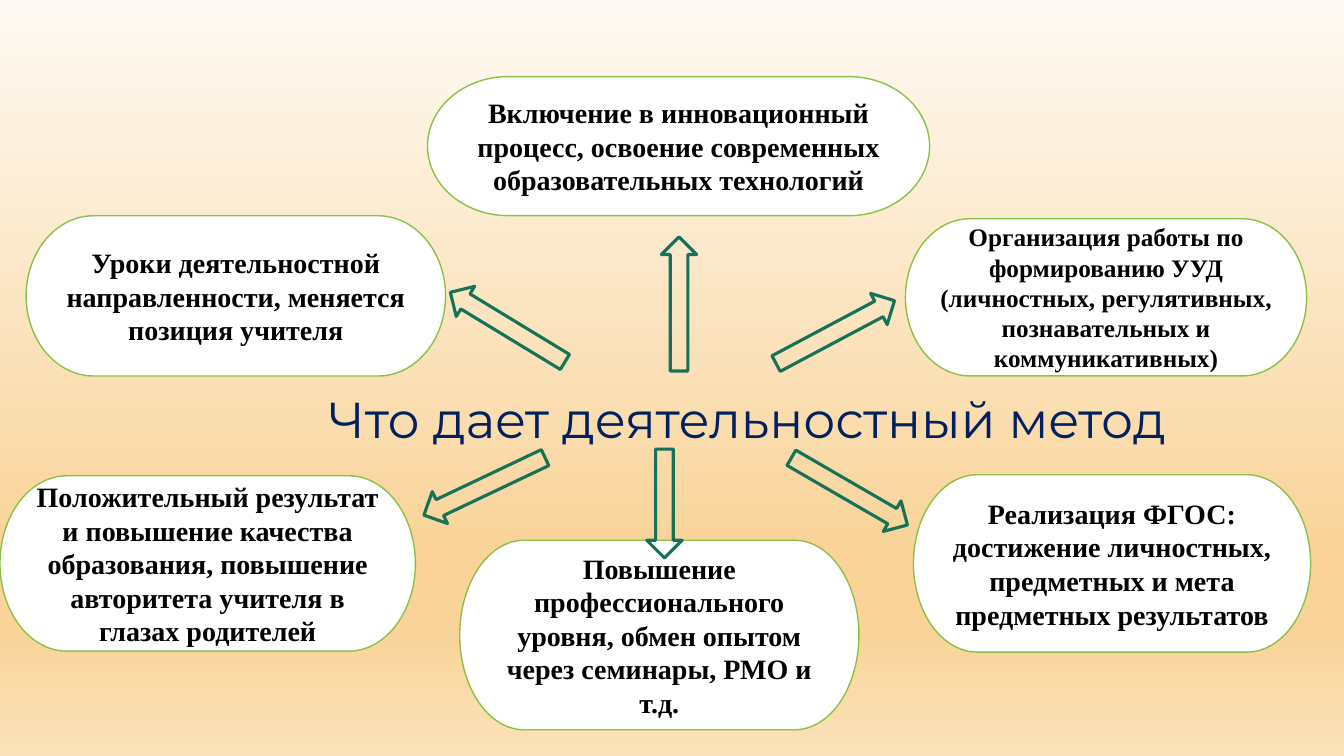
from lxml import etree
from pptx import Presentation
from pptx.dml.color import RGBColor
from pptx.enum.shapes import MSO_SHAPE
from pptx.enum.text import MSO_ANCHOR, MSO_AUTO_SIZE, PP_ALIGN
from pptx.oxml.ns import qn
from pptx.util import Inches, Pt

TERMINATOR, ARROW = MSO_SHAPE.FLOWCHART_TERMINATOR, MSO_SHAPE.RIGHT_ARROW
TOP, MIDDLE = MSO_ANCHOR.TOP, MSO_ANCHOR.MIDDLE
CENTER = PP_ALIGN.CENTER

NAVY = RGBColor(0x00, 0x20, 0x60)
BLACK = RGBColor(0x00, 0x00, 0x00)
WHITE = RGBColor(0xFF, 0xFF, 0xFF)
LIME = RGBColor(0x8B, 0xC1, 0x45)
GREEN = RGBColor(0x15, 0x72, 0x59)
BACKGROUND = [  # percent, colour
    (0, RGBColor(0xFE, 0xFA, 0xF3)),
    (74, RGBColor(0xF9, 0xD3, 0x98)),
    (83, RGBColor(0xF9, 0xD3, 0x98)),
    (100, RGBColor(0xFB, 0xE2, 0xBA)),
]

TITLE = "Что дает деятельностный метод"
BENEFITS = [  # left, top, width, height, text size, paragraphs
    (0.26, 2.14, 4.16, 1.59, 20,
     ["Уроки деятельностной направленности, меняется позиция учителя"]),
    (0, 4.72, 4.12, 1.74, 20,
     ["Положительный результат и повышение качества образования, "
      "повышение авторитета учителя в глазах родителей"]),
    (4.56, 5.36, 3.96, 1.88, 20,
     ["Повышение профессионального уровня, обмен опытом через семинары, "
      "РМО и т.д."]),
    (4.24, 0.76, 4.98, 1.38, 20,
     ["Включение в инновационный процесс, освоение современных "
      "образовательных технологий"]),
    (8.98, 2.17, 3.98, 1.56, 18,
     ["Организация работы по формированию УУД (личностных, регулятивных, "
      "познавательных и коммуникативных)"]),
    (9.06, 4.71, 3.94, 1.76, 20,
     ["Реализация ФГОС:",
      "достижение личностных, предметных и мета предметных результатов"]),
]
ARROW_HEIGHT = 0.35
ARROWS = [  # left, top, length, rotation
    (6.07, 2.84, 1.33, 270),
    (4.14, 4.65, 1.33, 154.6),
    (4.37, 3.07, 1.33, 211.3),
    (7.62, 3.12, 1.33, 332),
    (7.76, 4.7, 1.33, 30.1),
    (6.05, 4.82, 1.08, 90),
]


def paint_background(s):
    fill = s.background.fill
    fill.gradient()
    fill.gradient_angle = 270
    stops = next(s.background._cSld.iter(qn("a:gsLst")))
    for stop in list(stops):
        stops.remove(stop)
    for percent, color in BACKGROUND:
        stop = etree.SubElement(stops, qn("a:gs"), pos=str(percent * 1000))
        etree.SubElement(stop, qn("a:srgbClr"), val=str(color))


def write(sp, paragraphs, font, size, color, anchor, bold=False):
    tf = sp.text_frame
    tf.word_wrap = True
    tf.auto_size = MSO_AUTO_SIZE.NONE
    tf.vertical_anchor = anchor
    for i, text in enumerate(paragraphs):
        p = tf.add_paragraph() if i else tf.paragraphs[0]
        p.alignment = CENTER
        r = p.add_run()
        r.text = text
        r.font.name, r.font.size, r.font.bold = font, Pt(size), bold
        r.font.color.rgb = color


def add_outlined(s, kind, box, color, width):
    sp = s.shapes.add_shape(kind, *map(Inches, box))
    sp.shadow.inherit = False
    sp.line.color.rgb = color
    sp.line.width = Pt(width)
    return sp


def main():
    prs = Presentation()
    prs.slide_width, prs.slide_height = Inches(13.33), Inches(7.5)
    s = prs.slides.add_slide(prs.slide_layouts[5])
    paint_background(s)

    title = s.shapes.title
    title.left, title.top = Inches(2.29), Inches(3.8)
    title.width, title.height = Inches(10.24), Inches(0.71)
    write(title, [TITLE], "Montserrat", 36, NAVY, TOP)

    for *box, size, paragraphs in BENEFITS:
        sp = add_outlined(s, TERMINATOR, box, LIME, 1)
        sp.fill.solid()
        sp.fill.fore_color.rgb = WHITE
        write(sp, paragraphs, "Times New Roman", size, BLACK, MIDDLE, bold=True)

    for left, top, length, rotation in ARROWS:
        sp = add_outlined(s, ARROW, (left, top, length, ARROW_HEIGHT), GREEN, 2.25)
        sp.fill.background()
        sp.rotation = rotation

    prs.save("out.pptx")


if __name__ == "__main__":
    main()
